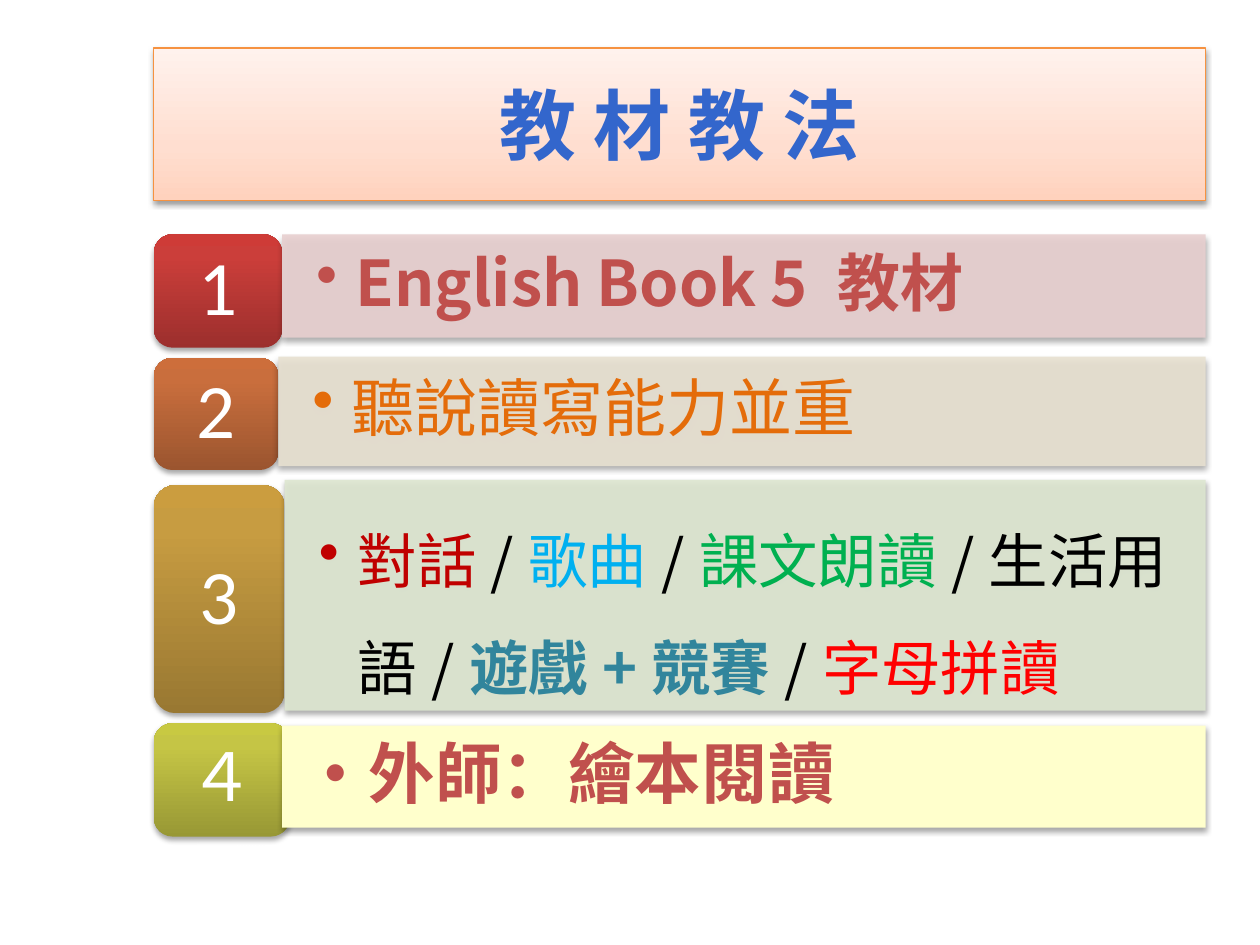
from dataclasses import dataclass
from typing import Optional

from lxml import etree
from pptx import Presentation
from pptx import util as u
from pptx.dml.color import RGBColor
from pptx.enum import shapes, text
from pptx.oxml import parse_xml
from pptx.oxml.ns import nsdecls, qn

COLORS = {
    "title": "3366CC", "title_line": "F69240", "white": "FFFFFF", "black": "000000",
    "brick": "C0504D", "orange": "E46C0A", "crimson": "C00000", "sky": "00B0F0",
    "green": "00B050", "teal": "31859C", "red": "FF0000",
    "rose": "E8D0D0", "sand": "E8E1D1", "sage": "DEE7D1", "cream": "FFFFCC",
}
GRADIENTS = {
    "title": ((0, "FFD2BD"), (35, "FFDED0"), (100, "FFF2ED")),
    "red": ((0, "9C2F2D"), (80, "CB3E3A"), (100, "CE3B37")),
    "copper": ((0, "9B552F"), (80, "C96E3D"), (100, "CD6E3B")),
    "gold": ((0, "997832"), (80, "C79C41"), (100, "CB9D3F")),
    "olive": ((0, "989835"), (80, "C5C545"), (100, "C8C942")),
}
CJK = "Noto Sans CJK SC"
LATIN = "Calibri"
LEFT, RIGHT = 1.22, 9.57


@dataclass
class Run:
    text: str
    color: str
    bold: bool = False


@dataclass
class Row:
    number: str
    gradient: str
    badge_top: float
    badge_width: float
    badge_height: float
    panel_left: float
    panel_top: float
    panel_height: float
    panel_color: str
    runs: list[Run]
    size: int = 36
    number_size: int = 44
    bullet: bool = True
    opacity: int = 90
    inset: float = 0.27
    line_spacing: float = 0.9
    space_after: int = 0


ROWS = [
    Row("1", "red", 1.86, 1.02, 0.9, 2.24, 1.86, 0.82, "rose",
        [Run("English Book 5 教材", "brick", True)]),
    Row("2", "copper", 2.84, 0.99, 0.89, 2.21, 2.83, 0.87, "sand",
        [Run("聽說讀寫能力並重", "orange")]),
    Row("3", "gold", 3.85, 1.04, 1.81, 2.26, 3.81, 1.83, "sage",
        [Run("對話", "crimson"), Run("/", "black"), Run("歌曲", "sky"), Run("/", "black"),
         Run("課文朗讀", "green"), Run("/生活用語/", "black"), Run("遊戲+競賽", "teal", True),
         Run("/", "black"), Run("字母拼讀", "red")],
        size=34, line_spacing=1.5, space_after=12),
    Row("４", "olive", 5.74, 1.08, 0.9, 2.24, 5.76, 0.81, "cream",
        [Run("・外師：繪本閱讀", "brick", True)],
        size=38, number_size=38, bullet=False, opacity=100, inset=0.16),
]


def add_box(s, kind, left: float, top: float, width: float, height: float):
    sp = s.shapes.add_shape(kind, *map(u.Inches, (left, top, width, height)))
    sp.line.fill.background()
    return sp


def add_shadow(sp, alpha: int = 35) -> None:
    sp.shadow.inherit = False
    effects = sp._element.spPr.find(qn("a:effectLst"))
    effects.append(parse_xml(
        f'<a:outerShdw {nsdecls("a")} blurRad="{u.Pt(3.1)}" dist="{u.Pt(1.8)}" '
        f'dir="5400000" rotWithShape="0"><a:srgbClr val="{COLORS["black"]}">'
        f'<a:alpha val="{alpha * 1000}"/></a:srgbClr></a:outerShdw>'))


def fill_gradient(sp, name: str) -> None:
    sp.fill.gradient()
    grad = sp._element.spPr.find(qn("a:gradFill"))
    stops = "".join(f'<a:gs pos="{pos * 1000}"><a:srgbClr val="{color}"/></a:gs>'
                    for pos, color in GRADIENTS[name])
    grad.getparent().replace(grad, parse_xml(
        f'<a:gradFill {nsdecls("a")} rotWithShape="1"><a:gsLst>{stops}</a:gsLst>'
        '<a:lin ang="16200000" scaled="0"/></a:gradFill>'))


def fill_solid(sp, name: str, opacity: int) -> None:
    sp.fill.solid()
    sp.fill.fore_color.rgb = RGBColor.from_string(COLORS[name])
    if opacity < 100:
        color = sp._element.spPr.find(qn("a:solidFill"))[0]
        etree.SubElement(color, qn("a:alpha"), val=str(opacity * 1000))


def write(sp, runs: list[Run], size: int, font: str, align, inset: float = 0.1,
          line_spacing: float = 1.0, space_after: int = 0, bullet: bool = False) -> None:
    tf = sp.text_frame
    frame = {"word_wrap": True, "vertical_anchor": text.MSO_ANCHOR.MIDDLE,
             "margin_left": u.Inches(inset), "margin_right": u.Inches(inset),
             "margin_top": u.Inches(inset / 2), "margin_bottom": u.Inches(inset / 2)}
    for name, value in frame.items():
        setattr(tf, name, value)
    p = tf.paragraphs[0]
    if bullet:
        props = p._p.get_or_add_pPr()
        props.set("marL", str(u.Inches(0.31)))
        props.set("indent", str(-u.Inches(0.31)))
        etree.SubElement(props, qn("a:buChar"), char="•")
    paragraph = {"alignment": align, "line_spacing": line_spacing,
                 "space_after": u.Pt(space_after)}
    for name, value in paragraph.items():
        setattr(p, name, value)
    for run in runs:
        r = p.add_run()
        r.text = run.text
        for name, value in {"size": u.Pt(size), "name": font, "bold": run.bold}.items():
            setattr(r.font, name, value)
        r.font.color.rgb = RGBColor.from_string(COLORS[run.color])
        etree.SubElement(r._r.get_or_add_rPr(), qn("a:ea"), typeface=font)


def add_title(s) -> None:
    sp = add_box(s, shapes.MSO_SHAPE.RECTANGLE, LEFT, 0.38, RIGHT - LEFT, 1.21)
    fill_gradient(sp, "title")
    sp.line.color.rgb = RGBColor.from_string(COLORS["title_line"])
    sp.line.width = u.Pt(0.75)
    add_shadow(sp, 38)
    write(sp, [Run("教 材 教 法", "title", True)], 44, CJK, text.PP_ALIGN.CENTER)


def add_row(s, row: Row) -> None:
    badge = add_box(s, shapes.MSO_SHAPE.ROUNDED_RECTANGLE, LEFT, row.badge_top,
                    row.badge_width, row.badge_height)
    fill_gradient(badge, row.gradient)
    add_shadow(badge)
    write(badge, [Run(row.number, "white")], row.number_size, LATIN,
          text.PP_ALIGN.CENTER, inset=0.18, line_spacing=0.9)
    panel = add_box(s, shapes.MSO_SHAPE.RECTANGLE, row.panel_left, row.panel_top,
                    RIGHT - row.panel_left, row.panel_height)
    fill_solid(panel, row.panel_color, row.opacity)
    add_shadow(panel)
    write(panel, row.runs, row.size, CJK, text.PP_ALIGN.LEFT, row.inset,
          row.line_spacing, row.space_after, row.bullet)


def main() -> None:
    prs = Presentation()
    prs.slide_width, prs.slide_height = u.Inches(10), u.Inches(7.5)
    s = prs.slides.add_slide(prs.slide_layouts[6])
    for row in ROWS:
        add_row(s, row)
    add_title(s)
    prs.save("out.pptx")


if __name__ == "__main__":
    main()
